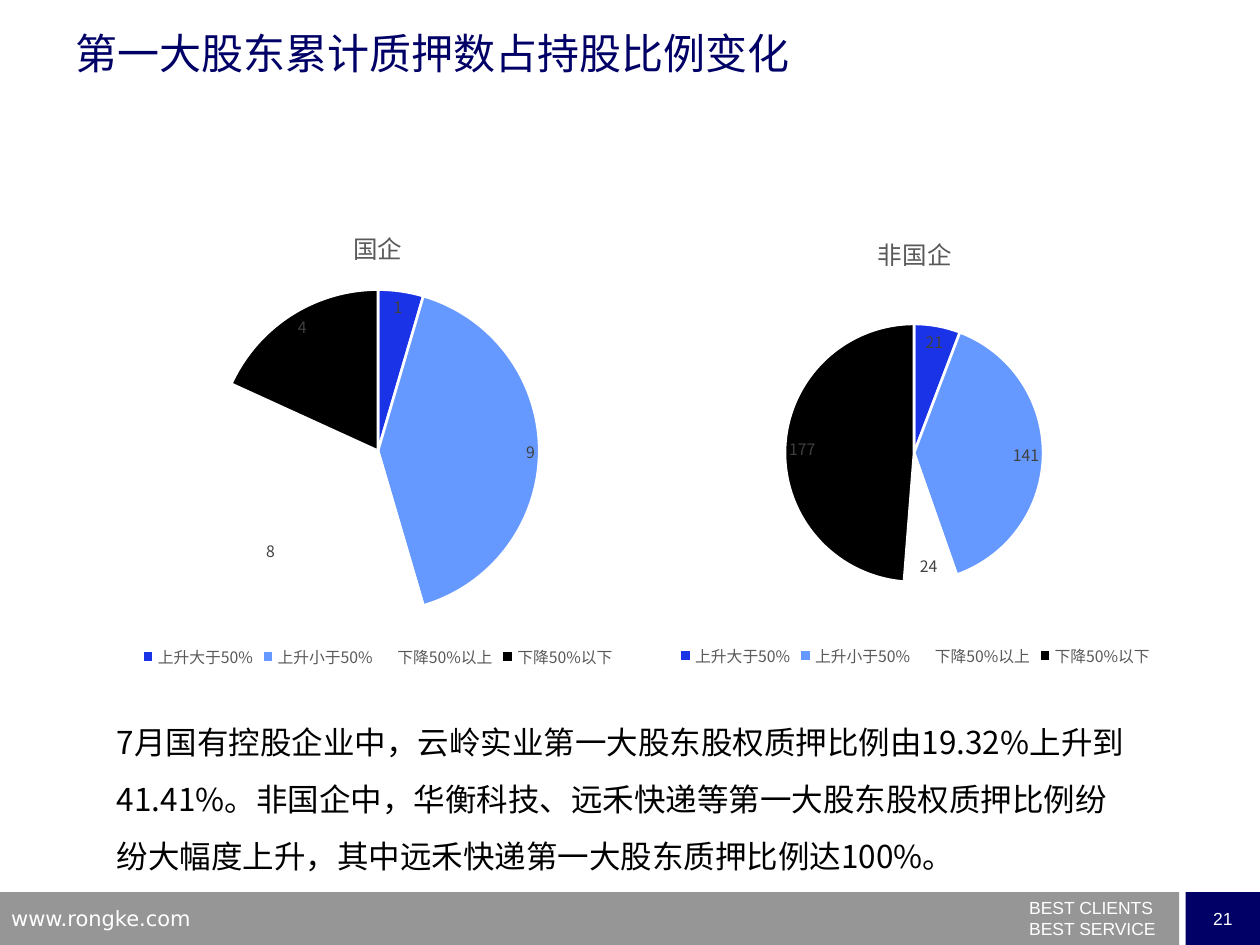
from lxml import etree
from pptx import Presentation
from pptx.chart.data import CategoryChartData
from pptx.dml.color import RGBColor
from pptx.enum.chart import XL_CHART_TYPE, XL_LABEL_POSITION, XL_LEGEND_POSITION
from pptx.enum.shapes import MSO_SHAPE
from pptx.enum.text import MSO_ANCHOR, PP_ALIGN
from pptx.oxml import parse_xml
from pptx.oxml.ns import nsdecls, qn
from pptx.util import Pt

PX = 9144
SANS = "Noto Sans CJK SC"


def color(value):
    return RGBColor.from_string(value)


def style(font, size, value, name=SANS):
    font.size = Pt(size)
    font.bold = False
    font.color.rgb = color(value)
    font.name = name
    if name == SANS:
        etree.SubElement(font._rPr, qn("a:ea"), typeface=name)


deck = Presentation()
deck.slide_width, deck.slide_height = 1000 * PX, 750 * PX
page = deck.slides.add_slide(deck.slide_layouts[6])

bars = []
for left, width, fill in [(0, 936, "969696"), (941, 59, "000066")]:
    bar = page.shapes.add_shape(MSO_SHAPE.RECTANGLE, left * PX, 708 * PX, width * PX, 42 * PX)
    bar.shadow.inherit = False
    bar.fill.solid()
    bar.fill.fore_color.rgb = color(fill)
    bar.line.fill.background()
    bars.append(bar)

number = bars[1].text_frame
number.word_wrap = False
number.vertical_anchor = MSO_ANCHOR.MIDDLE
para = number.paragraphs[0]
para.text = "21"
para.alignment = PP_ALIGN.CENTER
style(para.font, 10, "FFFFFF", "Arial")

texts = [
    (807, 714, 192, 35, ["BEST CLIENTS", "BEST SERVICE"], 10, "FFFFFF", "Arial", 0.5),
    (-1, 714, 241, 26, ["www.rongke.com"], 12, "FFFFFF", "DejaVu Sans", 1),
    (50, 17, 900, 125, ["第一大股东累计质押数占持股比例变化"], 24, "000066", SANS, 1),
    (83, 554, 823, 141, [
        "7月国有控股企业中，云岭实业第一大股东股权质押比例由19.32%上升到41.41%。"
        "非国企中，华衡科技、远禾快递等第一大股东股权质押比例纷纷大幅度上升，"
        "其中远禾快递第一大股东质押比例达100%。"
    ], 18, "000000", SANS, 1.5),
]
for left, top, width, height, lines, size, ink, name, spacing in texts:
    box = page.shapes.add_textbox(left * PX, top * PX, width * PX, height * PX)
    frame = box.text_frame
    frame.word_wrap = True
    for index, line in enumerate(lines):
        para = frame.add_paragraph() if index else frame.paragraphs[0]
        para.text = line
        para.line_spacing = spacing
        if index:
            para.space_before = Pt(6)
        style(para.font, size, ink, name)

categories = ["上升大于50%", "上升小于50%", "下降50%以上", "下降50%以下"]
slices = ["1B33E7", "6699FF", "FFFFFF", "000000"]
pies = [
    ("国企", (1, 9, 8, 4), (50, 164, 500, 370), (172, 230, 256)),
    ("非国企", (21, 141, 24, 177), (469, 169, 515, 364), (623, 257, 205)),
]
for title, values, area, circle in pies:
    data = CategoryChartData()
    data.categories = categories
    data.add_series("Series 1", values)
    left, top, width, height = area
    chart = page.shapes.add_chart(
        XL_CHART_TYPE.PIE, left * PX, top * PX, width * PX, height * PX, data).chart
    style(chart.font, 10, "000000")

    chart.has_title = True
    para = chart.chart_title.text_frame.paragraphs[0]
    para.text = title
    style(para.font, 14, "595959")
    chart.chart_title.include_in_layout = False

    chart.has_legend = True
    chart.legend.position = XL_LEGEND_POSITION.BOTTOM
    chart.legend.include_in_layout = False
    style(chart.legend.font, 9, "595959")

    plot = chart.plots[0]
    plot.vary_by_categories = True
    for index, fill in enumerate(slices):
        wedge = plot.series[0].points[index].format
        wedge.fill.solid()
        wedge.fill.fore_color.rgb = color(fill)
        wedge.line.color.rgb = color("FFFFFF")
        wedge.line.width = Pt(1.5)

    labels = plot.series[0].data_labels
    labels.show_value = True
    labels.position = XL_LABEL_POSITION.BEST_FIT
    style(labels.font, 9, "404040")

    x, y, diameter = circle
    places = {"x": (x - left) / width, "y": (y - top) / height,
              "w": diameter / width, "h": diameter / height}
    items = "".join(f'<c:{key} val="{place:.3f}"/>' for key, place in places.items())
    layout = parse_xml(
        f'<c:layout {nsdecls("c")}><c:manualLayout><c:layoutTarget val="inner"/>'
        f'<c:xMode val="edge"/><c:yMode val="edge"/>{items}</c:manualLayout></c:layout>')
    plot_area = chart._chartSpace.find(".//" + qn("c:plotArea"))
    for automatic in plot_area.findall(qn("c:layout")):
        plot_area.remove(automatic)
    plot_area.insert(0, layout)

deck.save("out.pptx")
